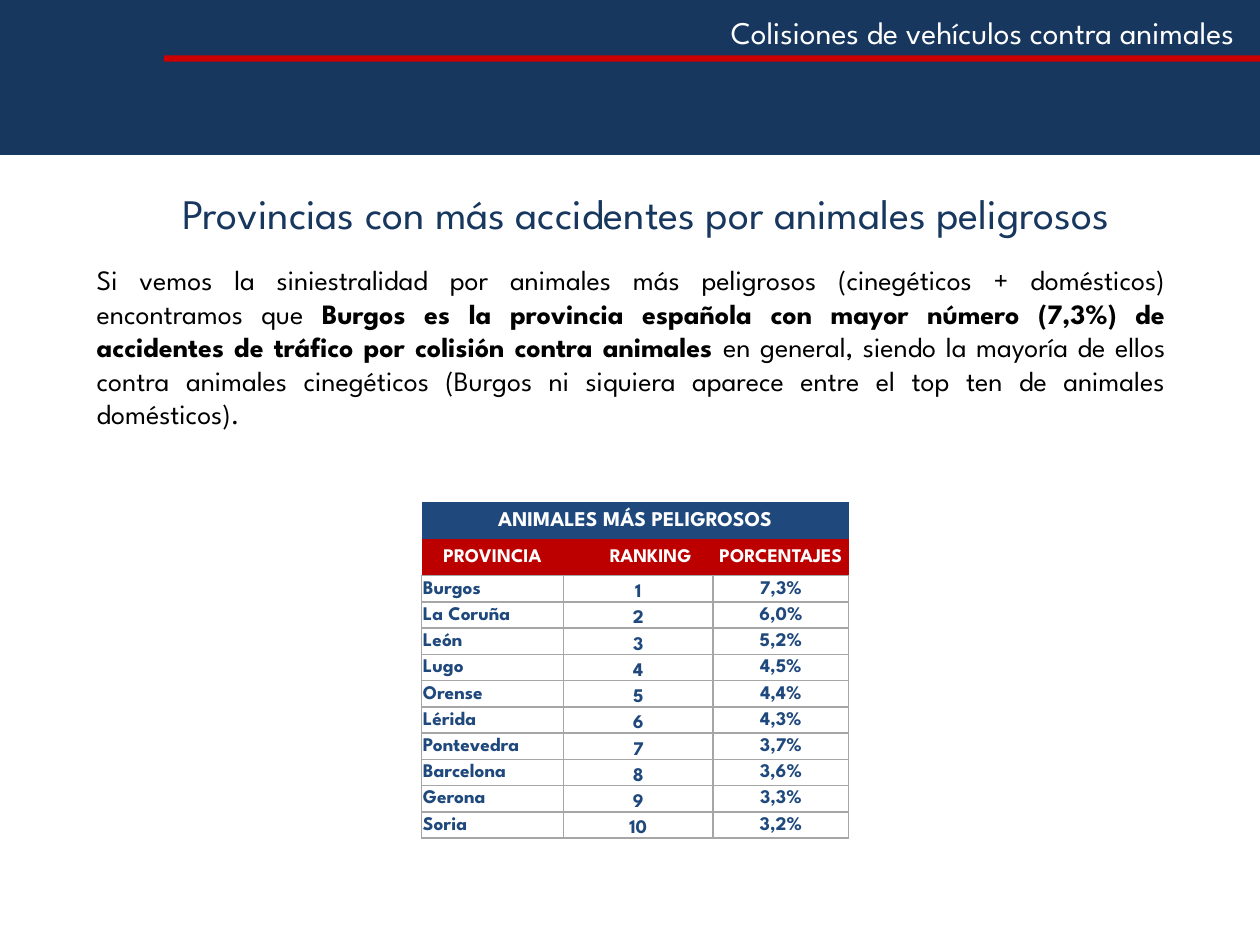
from dataclasses import dataclass

from lxml import etree
from pptx import Presentation
from pptx import util as u
from pptx.dml.color import RGBColor
from pptx.enum import shapes, text
from pptx.oxml.ns import qn

FONT = "League Spartan"
NAVY = RGBColor(0x17, 0x37, 0x5E)
RED = RGBColor(0xCC, 0x00, 0x00)
TABLE_BLUE = RGBColor(0x1F, 0x49, 0x7D)
TABLE_RED = RGBColor(0xBC, 0x00, 0x00)
GREY = RGBColor(0xA6, 0xA6, 0xA6)
WHITE = RGBColor(0xFF, 0xFF, 0xFF)
BLACK = RGBColor(0x00, 0x00, 0x00)

LEFT, CENTER, RIGHT, JUSTIFY = (
    text.PP_ALIGN.LEFT, text.PP_ALIGN.CENTER, text.PP_ALIGN.RIGHT, text.PP_ALIGN.JUSTIFY)
MIDDLE, BOTTOM = text.MSO_ANCHOR.MIDDLE, text.MSO_ANCHOR.BOTTOM


@dataclass(frozen=True)
class Box:
    left: float
    top: float
    width: float
    height: float

    def lengths(self) -> tuple:
        return tuple(u.Pt(v) for v in (self.left, self.top, self.width, self.height))


@dataclass(frozen=True)
class CellStyle:
    fill: RGBColor
    color: RGBColor
    size: float
    align: text.PP_ALIGN = CENTER
    anchor: text.MSO_ANCHOR = MIDDLE
    borders: str = "LRTB"
    indent: float = 0.72


@dataclass(frozen=True)
class Province:
    name: str
    share: str


PROVINCES = [
    Province("Burgos", "7,3%"), Province("La Coruña", "6,0%"),
    Province("León", "5,2%"), Province("Lugo", "4,5%"),
    Province("Orense", "4,4%"), Province("Lérida", "4,3%"),
    Province("Pontevedra", "3,7%"), Province("Barcelona", "3,6%"),
    Province("Gerona", "3,3%"), Province("Soria", "3,2%"),
]
INTRO = [
    ("Si vemos la siniestralidad por animales más peligrosos (cinegéticos + "
     "domésticos) encontramos que ", False),
    ("Burgos es la provincia española con mayor número (7,3%) de accidentes de "
     "tráfico por colisión contra animales ", True),
    ("en general, siendo la mayoría de ellos contra animales cinegéticos (Burgos ni "
     "siquiera aparece entre el top ten de animales domésticos).", False),
]
COLUMN_WIDTHS = [81, 85.5, 77.5]
HEADER_HEIGHT, ROW_HEIGHT = 21, 15

BANNER = CellStyle(TABLE_BLUE, WHITE, 12, borders="")
HEADING = CellStyle(TABLE_RED, WHITE, 11, borders="B")
RANK_HEADING = CellStyle(TABLE_RED, WHITE, 11, borders="B", indent=15)
NAME = CellStyle(WHITE, TABLE_BLUE, 11, align=LEFT)
RANK = CellStyle(WHITE, TABLE_BLUE, 11, anchor=BOTTOM)
SHARE = CellStyle(WHITE, TABLE_BLUE, 11)


def format_run(run, size: float, color: RGBColor, bold: bool = False) -> None:
    run.font.name = FONT
    run.font.size = u.Pt(size)
    run.font.bold = bold
    run.font.color.rgb = color


def draw_bar(slide, box: Box, color: RGBColor) -> None:
    bar = slide.shapes.add_shape(shapes.MSO_SHAPE.RECTANGLE, *box.lengths())
    bar.shadow.inherit = False
    bar.fill.solid()
    bar.fill.fore_color.rgb = color
    bar.line.fill.background()


def fill_text(shape, pieces: list, size: float, color: RGBColor,
              align: text.PP_ALIGN, anchor: text.MSO_ANCHOR, wrap: bool = True) -> None:
    frame = shape.text_frame
    frame.word_wrap = wrap
    frame.auto_size = text.MSO_AUTO_SIZE.NONE
    frame.vertical_anchor = anchor
    paragraph = frame.paragraphs[0]
    paragraph.alignment = align
    for words, bold in pieces:
        run = paragraph.add_run()
        run.text = words
        format_run(run, size, color, bold)


def set_borders(cell, visible: str) -> None:
    properties = cell._tc.get_or_add_tcPr()
    for side in "LRTB":
        line = etree.SubElement(properties, qn(f"a:ln{side}"), w=str(u.Pt(1)))
        if side in visible:
            paint = etree.SubElement(line, qn("a:solidFill"))
            etree.SubElement(paint, qn("a:srgbClr"), val=str(GREY))
        else:
            etree.SubElement(line, qn("a:noFill"))


def fill_cell(cell, words: str, style: CellStyle) -> None:
    set_borders(cell, style.borders)
    cell.fill.solid()
    cell.fill.fore_color.rgb = style.fill
    cell.margin_left = u.Pt(style.indent)
    cell.margin_right = cell.margin_top = u.Pt(0.72)
    cell.margin_bottom = 0
    cell.vertical_anchor = style.anchor
    paragraph = cell.text_frame.paragraphs[0]
    paragraph.text = words
    paragraph.alignment = style.align
    paragraph.font.size = u.Pt(style.size)
    for run in paragraph.runs:
        format_run(run, style.size, style.color, bold=True)


def draw_ranking(slide, left: float, top: float) -> None:
    heights = [HEADER_HEIGHT] * 2 + [ROW_HEIGHT] * len(PROVINCES)
    box = Box(left, top, sum(COLUMN_WIDTHS), sum(heights))
    table = slide.shapes.add_table(len(heights), len(COLUMN_WIDTHS), *box.lengths()).table
    table.first_row = table.horz_banding = False
    for column, width in zip(table.columns, COLUMN_WIDTHS):
        column.width = u.Pt(width)
    for row, height in zip(table.rows, heights):
        row.height = u.Pt(height)

    rows = [
        (("ANIMALES MÁS PELIGROSOS", "", ""), (BANNER,) * 3),
        (("PROVINCIA", "RANKING", "PORCENTAJES"), (HEADING, RANK_HEADING, HEADING)),
    ]
    for rank, province in enumerate(PROVINCES, start=1):
        rows.append(((province.name, str(rank), province.share), (NAME, RANK, SHARE)))
    for r, (words, styles) in enumerate(rows):
        for c, (word, style) in enumerate(zip(words, styles)):
            fill_cell(table.cell(r, c), word, style)
    table.cell(0, 0).merge(table.cell(0, 2))


def main() -> None:
    deck = Presentation()
    deck.slide_width, deck.slide_height = u.Pt(720), u.Pt(540)
    slide = deck.slides.add_slide(deck.slide_layouts[5])

    # Header band with running title and red rule
    draw_bar(slide, Box(0, 0, 720, 88.5), NAVY)
    running_title = slide.shapes.add_textbox(*Box(350, 3.6, 362.5, 29).lengths())
    fill_text(running_title, [("Colisiones de vehículos contra animales", False)],
              18, WHITE, RIGHT, text.MSO_ANCHOR.TOP, wrap=False)
    draw_bar(slide, Box(93.6, 31.7, 626.4, 3.6), RED)

    # Slide title
    title = slide.shapes.title
    title.left, title.top, title.width, title.height = Box(20, 63.4, 698, 116).lengths()
    fill_text(title, [("Provincias con más accidentes por animales peligrosos", False)],
              24, NAVY, CENTER, MIDDLE)

    # Introduction
    intro = slide.shapes.add_textbox(*Box(48.2, 8, 625, 380).lengths())
    fill_text(intro, INTRO, 16, BLACK, JUSTIFY, MIDDLE)

    # Ranking of provinces
    draw_ranking(slide, 241, 287)

    deck.save("out.pptx")


if __name__ == "__main__":
    main()
